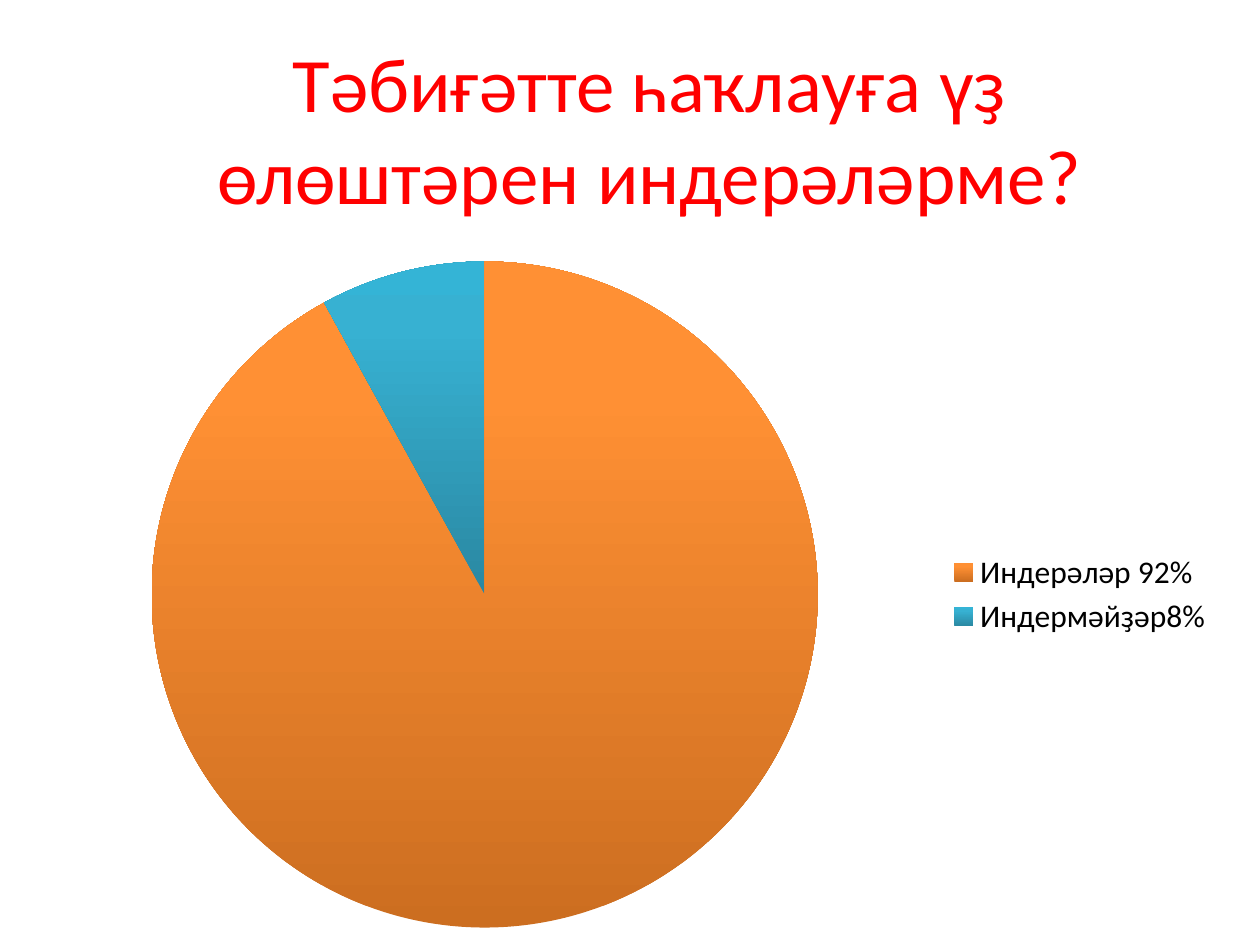
from copy import deepcopy

from pptx import Presentation
from pptx.chart.data import CategoryChartData
from pptx.dml.color import RGBColor
from pptx.enum.chart import XL_CHART_TYPE, XL_LEGEND_POSITION
from pptx.enum.text import MSO_ANCHOR, PP_ALIGN
from pptx.util import Pt

PIE = XL_CHART_TYPE.PIE
LEGEND_RIGHT = XL_LEGEND_POSITION.RIGHT
MIDDLE = MSO_ANCHOR.MIDDLE
CENTER = PP_ALIGN.CENTER

FONT = "Calibri"
RED = RGBColor(0xFF, 0x00, 0x00)
BLACK = RGBColor(0x00, 0x00, 0x00)
ORANGES = (RGBColor(0xCC, 0x6E, 0x20), RGBColor(0xFF, 0x90, 0x34), RGBColor(0xFF, 0x91, 0x36))
BLUES = (RGBColor(0x2A, 0x88, 0xA2), RGBColor(0x37, 0xB1, 0xD2), RGBColor(0x34, 0xB4, 0xD6))
STOP_POSITIONS = (0, 0.8, 1)

ANSWERS = {"Индерәләр 92%": (92, ORANGES), "Индермәйҙәр8%": (8, BLUES)}


def style_font(font, size, color):
    font.name = FONT
    font.size = Pt(size)
    font.color.rgb = color


def add_title(slide, text):
    frame = slide.shapes.add_textbox(Pt(65.5), Pt(15), Pt(612), Pt(116)).text_frame
    frame.word_wrap = True
    frame.vertical_anchor = MIDDLE
    question = frame.paragraphs[0]
    question.text = text
    question.alignment = CENTER
    style_font(question.font, 44, RED)


def shade_slice(series, index, colors):
    """Fill a slice with a three-stop gradient that runs from bottom to top."""
    fill = series.points[index].format.fill
    fill.gradient()
    fill.gradient_angle = 90
    stop_list = series._element.xpath(".//a:gsLst")[-1]
    stop_list.append(deepcopy(stop_list[-1]))
    for stop, position, color in zip(fill.gradient_stops, STOP_POSITIONS, colors):
        stop.position = position
        stop.color.rgb = color


def add_answer_pie(slide):
    data = CategoryChartData()
    data.categories = list(ANSWERS)
    data.add_series("Series 1", [share for share, _ in ANSWERS.values()])
    chart = slide.shapes.add_chart(PIE, Pt(14.5), Pt(139.5), Pt(686), Pt(400.5), data).chart
    chart.has_title = False
    chart.has_legend = True
    chart.legend.position = LEGEND_RIGHT
    chart.legend.include_in_layout = False
    style_font(chart.font, 18, BLACK)
    pie = chart.plots[0]
    pie.vary_by_categories = True
    for index, (_, colors) in enumerate(ANSWERS.values()):
        shade_slice(pie.series[0], index, colors)


def main():
    prs = Presentation()
    prs.slide_width, prs.slide_height = Pt(720), Pt(540)
    slide = prs.slides.add_slide(prs.slide_layouts[6])
    add_title(slide, "Тәбиғәтте һаҡлауға үҙ өлөштәрен индерәләрме?")
    add_answer_pie(slide)
    prs.save("out.pptx")


if __name__ == "__main__":
    main()
